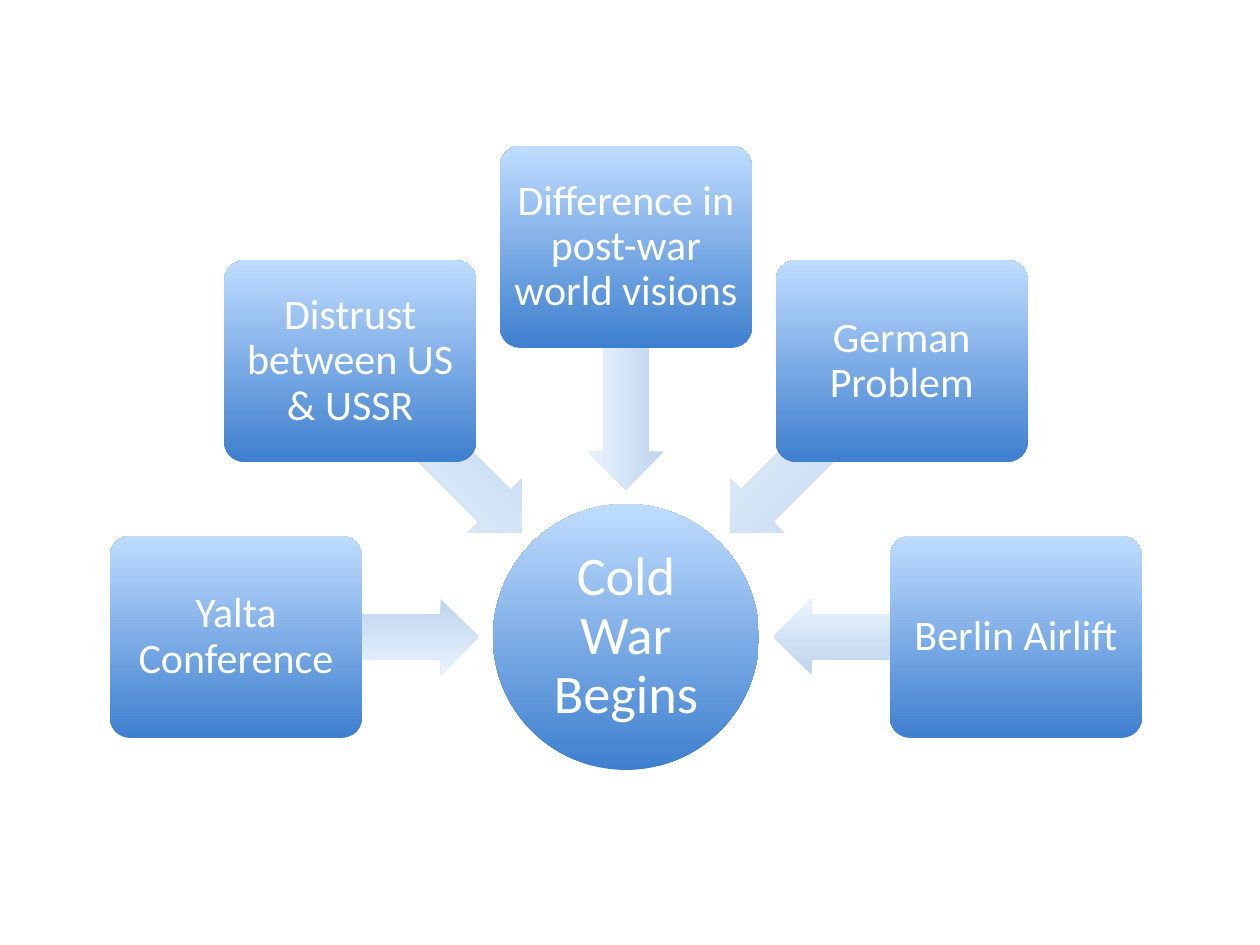
"""Build a radial slide of five causes pointing at the start of the Cold War."""

from dataclasses import dataclass
from math import cos, radians, sin

from pptx import Presentation
from pptx.dml.color import RGBColor
from pptx.enum.shapes import MSO_SHAPE
from pptx.enum.text import MSO_ANCHOR, PP_ALIGN
from pptx.shapes.autoshape import Shape
from pptx.shapes.shapetree import GroupShapes
from pptx.util import Emu, Pt

EMU_PER_PX = 914400 / 126


@dataclass(frozen=True)
class Theme:
    font: str = "Calibri"
    text: str = "FFFFFF"
    node_gradient: tuple[str, str] = ("3E7FCE", "BFDCFF")
    arrow_gradient: tuple[str, str] = ("BED4ED", "EAF3FF")
    hub_size: int = 31
    cause_size: int = 24
    line_spacing: float = 0.9
    space_ratio: float = 0.35


@dataclass(frozen=True)
class Cause:
    label: str
    angle: int


@dataclass(frozen=True)
class Size:
    width: int
    height: int


THEME = Theme()
SLIDE = Size(1260, 945)
HUB = Size(266, 266)
BOX = Size(252, 202)
ARROW = Size(243, 76)
CENTER_X, CENTER_Y = 626, 637
BOX_RADIUS = 390
ARROW_RADIUS = 269
HUB_INSET = 3
BOX_INSET = 6
CAUSES = [
    Cause("Yalta Conference", 180),
    Cause("Distrust between US & USSR", 225),
    Cause("Difference in post-war world visions", 270),
    Cause("German Problem", 315),
    Cause("Berlin Airlift", 0),
]


def px(length: float) -> Emu:
    """Convert pixels to EMU."""
    return Emu(round(length * EMU_PER_PX))


def add_part(shapes: GroupShapes, kind: MSO_SHAPE, size: Size, radius: int,
             angle: int, gradient: tuple[str, str]) -> Shape:
    """Add a gradient shape centred at a polar position around the hub."""
    left = CENTER_X + radius * cos(radians(angle)) - size.width / 2
    top = CENTER_Y + radius * sin(radians(angle)) - size.height / 2
    part = shapes.add_shape(kind, px(left), px(top), px(size.width), px(size.height))
    part.shadow.inherit = False
    part.line.fill.background()
    part.fill.gradient()
    part.fill.gradient_angle = 90
    for stop, color in zip(part.fill.gradient_stops, gradient):
        stop.color.rgb = RGBColor.from_string(color)
    return part


def add_label(part: Shape, label: str, size: int, inset: int) -> None:
    """Write centred text inside a shape."""
    frame = part.text_frame
    frame.word_wrap = True
    frame.vertical_anchor = MSO_ANCHOR.MIDDLE
    frame.margin_left = frame.margin_right = px(inset)
    frame.margin_top = frame.margin_bottom = px(inset)
    para = frame.paragraphs[0]
    para.text = label
    para.alignment = PP_ALIGN.CENTER
    para.line_spacing = THEME.line_spacing
    para.space_after = Pt(size * THEME.space_ratio)
    para.font.name = THEME.font
    para.font.size = Pt(size)
    para.font.color.rgb = RGBColor.from_string(THEME.text)


def add_hub(shapes: GroupShapes) -> None:
    """Draw the central circle."""
    hub = add_part(shapes, MSO_SHAPE.OVAL, HUB, 0, 0, THEME.node_gradient)
    add_label(hub, "Cold War Begins", THEME.hub_size, HUB_INSET)


def add_cause(shapes: GroupShapes, cause: Cause) -> None:
    """Draw one cause box over its arrow to the hub."""
    arrow = add_part(shapes, MSO_SHAPE.LEFT_ARROW, ARROW, ARROW_RADIUS,
                     cause.angle, THEME.arrow_gradient)
    arrow.adjustments[0] = 0.6
    arrow.adjustments[1] = 0.5
    arrow.rotation = cause.angle
    box = add_part(shapes, MSO_SHAPE.ROUNDED_RECTANGLE, BOX, BOX_RADIUS,
                   cause.angle, THEME.node_gradient)
    box.adjustments[0] = 0.1
    add_label(box, cause.label, THEME.cause_size, BOX_INSET)


def main() -> None:
    """Create and save the deck."""
    deck = Presentation()
    deck.slide_width, deck.slide_height = px(SLIDE.width), px(SLIDE.height)
    page = deck.slides.add_slide(deck.slide_layouts[6])
    diagram = page.shapes.add_group_shape()
    add_hub(diagram.shapes)
    for cause in CAUSES:
        add_cause(diagram.shapes, cause)
    deck.save("out.pptx")


if __name__ == "__main__":
    main()
